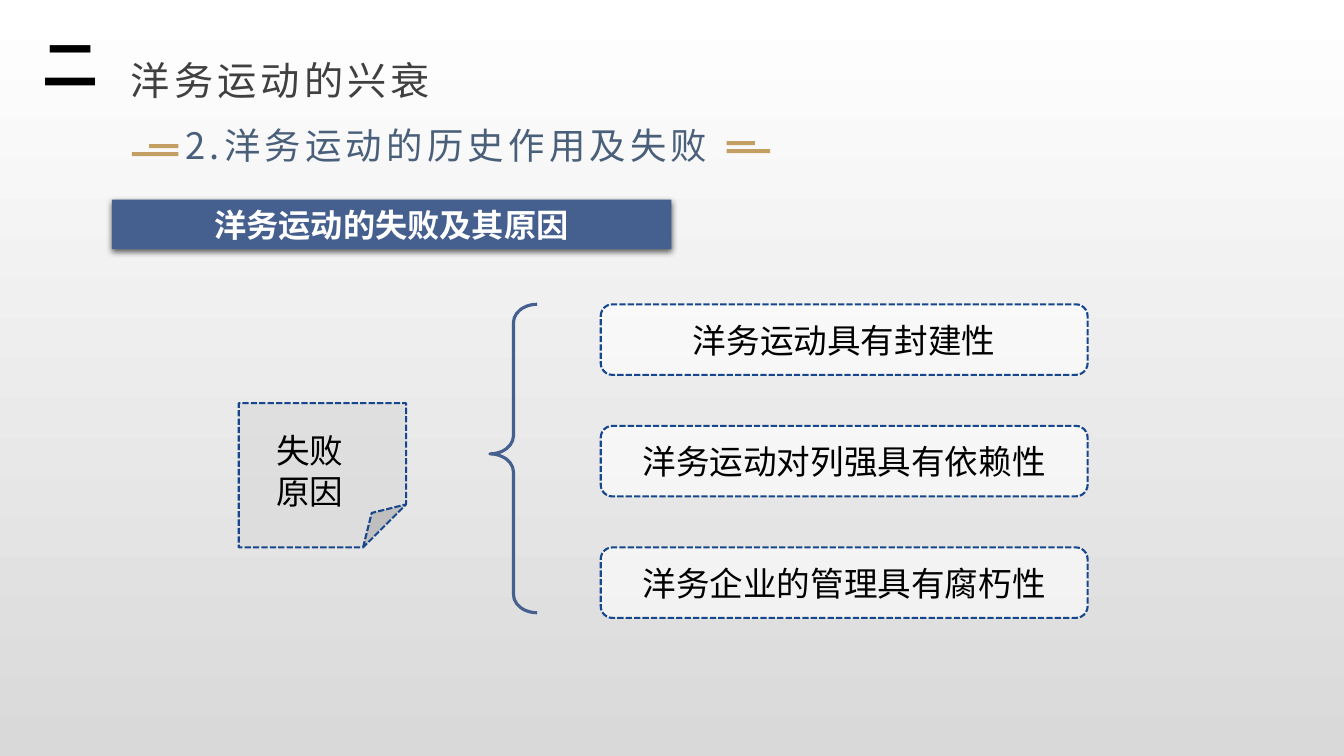
from typing import NamedTuple

from lxml.etree import SubElement
from pptx import Presentation
from pptx.dml.color import RGBColor
from pptx.enum.dml import MSO_LINE
from pptx.enum.shapes import MSO_SHAPE as SHAPE
from pptx.enum.text import MSO_ANCHOR as ANCHOR, PP_ALIGN as ALIGN
from pptx.oxml.ns import qn
from pptx.util import Pt

FONT = "Noto Sans CJK SC"
WHITE = RGBColor(0xFF, 0xFF, 0xFF)
BLACK = RGBColor(0x00, 0x00, 0x00)
GREY = RGBColor(0xD9, 0xD9, 0xD9)
CHARCOAL = RGBColor(0x40, 0x40, 0x40)
SLATE = RGBColor(0x4A, 0x5F, 0x7A)
GOLD = RGBColor(0xC3, 0x9F, 0x64)
BLUE = RGBColor(0x45, 0x5F, 0x8E)
NAVY = RGBColor(0x16, 0x46, 0x8D)

REASONS = ["洋务运动具有封建性", "洋务运动对列强具有依赖性", "洋务企业的管理具有腐朽性"]


class Box(NamedTuple):
    """A rectangle in points."""
    left: float
    top: float
    width: float
    height: float

    def inner(self, left, top, width, height):
        """Return a box whose corner is offset from this one."""
        return Box(self.left + left, self.top + top, width, height)

    def lengths(self):
        """Return the four values as lengths."""
        return [Pt(value) for value in self]


def write(shape, lines, size, color, bold=False, align=ALIGN.LEFT,
          anchor=ANCHOR.TOP, spacing=None, tracking=None):
    """Fill a shape with equally styled paragraphs."""
    frame = shape.text_frame
    frame.word_wrap = True
    frame.vertical_anchor = anchor
    frame.text = "\n".join(lines)
    for para in frame.paragraphs:
        para.alignment = align
        para.line_spacing = spacing
        font = para.font
        font.name, font.size, font.bold = FONT, Pt(size), bold
        font.color.rgb = color
        properties = para._p.pPr.find(qn("a:defRPr"))
        SubElement(properties, qn("a:ea"), typeface=FONT)
        if tracking:
            properties.set("spc", str(tracking * 100))


def add_label(slide, box, lines, size, color, **style):
    """Add a text box."""
    write(slide.shapes.add_textbox(*box.lengths()), lines, size, color, **style)


def add_figure(slide, kind, box, fill=None, alpha=None):
    """Add a flat shape without an outline."""
    shape = slide.shapes.add_shape(kind, *box.lengths())
    shape.shadow.inherit = False
    shape.line.fill.background()
    if fill is None:
        shape.fill.background()
    else:
        shape.fill.solid()
        shape.fill.fore_color.rgb = fill
    if alpha:
        tint = shape._element.spPr.find(qn("a:solidFill"))[0]
        SubElement(tint, qn("a:alpha"), val=str(alpha * 1000))
    return shape


def add_dashed(slide, kind, box, fill):
    """Add a translucent shape with a dashed outline."""
    shape = add_figure(slide, kind, box, fill, alpha=62)
    shape.line.color.rgb = NAVY
    shape.line.width = Pt(1.5)
    shape.line.dash_style = MSO_LINE.SQUARE_DOT
    return shape


def add_heading(slide, box):
    """Place the section number, title and subtitle with its gold bars."""
    add_label(slide, box.inner(0, 0, 43.2, 55.4), ["二"], 40, BLACK, bold=True)
    add_label(slide, box.inner(63.4, 13, 739.4, 42.5), ["洋务运动的兴衰"],
              28, CHARCOAL, spacing=Pt(40), tracking=3)
    add_label(slide, box.inner(102.3, 58.3, 517.7, 41.8), ["2.洋务运动的历史作用及失败"],
              26, SLATE, spacing=Pt(40), tracking=3)
    for left, top, width in [(496.1, 89.3, 31), (496.1, 83.5, 20.2),
                             (71.3, 91.4, 33.1), (83.5, 85.7, 20.9)]:
        add_figure(slide, SHAPE.RECTANGLE, box.inner(left, top, width, 2.9), GOLD)


def add_banner(slide, box):
    """Place the topic banner with its soft shadow."""
    banner = add_figure(slide, SHAPE.RECTANGLE, box, BLUE)
    effects = banner._element.spPr.find(qn("a:effectLst"))
    shadow = SubElement(effects, qn("a:outerShdw"), blurRad=str(Pt(4.5)),
                        dist=str(Pt(1.5)), dir="5400000", rotWithShape="0")
    tint = SubElement(shadow, qn("a:srgbClr"), val=str(BLACK))
    SubElement(tint, qn("a:alpha"), val="63000")
    write(banner, ["洋务运动的失败及其原因"], 23, WHITE, bold=True,
          align=ALIGN.CENTER, anchor=ANCHOR.MIDDLE)


def add_reasons(slide, box):
    """Stack the reason boxes evenly over the height of the box."""
    height = 50.4
    step = (box.height - height) / (len(REASONS) - 1)
    for row, reason in enumerate(REASONS):
        card = add_dashed(slide, SHAPE.ROUNDED_RECTANGLE,
                          box.inner(0, row * step, box.width, height), WHITE)
        write(card, [reason], 24, BLACK, align=ALIGN.CENTER, anchor=ANCHOR.MIDDLE)


def add_brace(slide, box):
    """Draw the brace that gathers the reasons."""
    brace = add_figure(slide, SHAPE.LEFT_BRACE, box)
    brace.line.color.rgb = BLUE
    brace.line.width = Pt(2.25)
    set_guides(brace, adj1=38500, adj2=48500)


def set_guides(shape, **guides):
    """Set the adjustment guides of a preset shape."""
    values = shape._element.spPr.find(qn("a:prstGeom")).find(qn("a:avLst"))
    values.clear()
    for name, value in guides.items():
        SubElement(values, qn("a:gd"), name=name, fmla=f"val {value}")


def add_note(slide, box):
    """Place the folded note that names the topic of the reasons."""
    note = add_dashed(slide, SHAPE.FOLDED_CORNER, box, GREY)
    set_guides(note, adj=29800)
    add_label(slide, box.inner(19.5, 15.8, 80.6, 65.5), ["失败", "原因"],
              24, BLACK, align=ALIGN.JUSTIFY)


def paint_background(slide):
    """Fade the background from white down to grey."""
    fill = slide.background.fill
    fill.gradient()
    fill.gradient_angle = 270
    for stop, color, position in zip(fill.gradient_stops, (WHITE, GREY), (0, 1)):
        stop.color.rgb = color
        stop.position = position


def main():
    """Build and save the deck."""
    deck = Presentation()
    deck.slide_width, deck.slide_height = Pt(960), Pt(540)
    slide = deck.slides.add_slide(deck.slide_layouts[6])
    paint_background(slide)
    add_heading(slide, Box(23, 17.3, 803, 100))
    add_banner(slide, Box(79.9, 142.6, 399.6, 35.3))
    add_reasons(slide, Box(429.1, 217.4, 347.8, 224))
    add_brace(slide, Box(349.9, 217.4, 33.8, 220.3))
    add_note(slide, Box(170.6, 288, 119.5, 103))
    deck.save("out.pptx")


if __name__ == "__main__":
    main()
